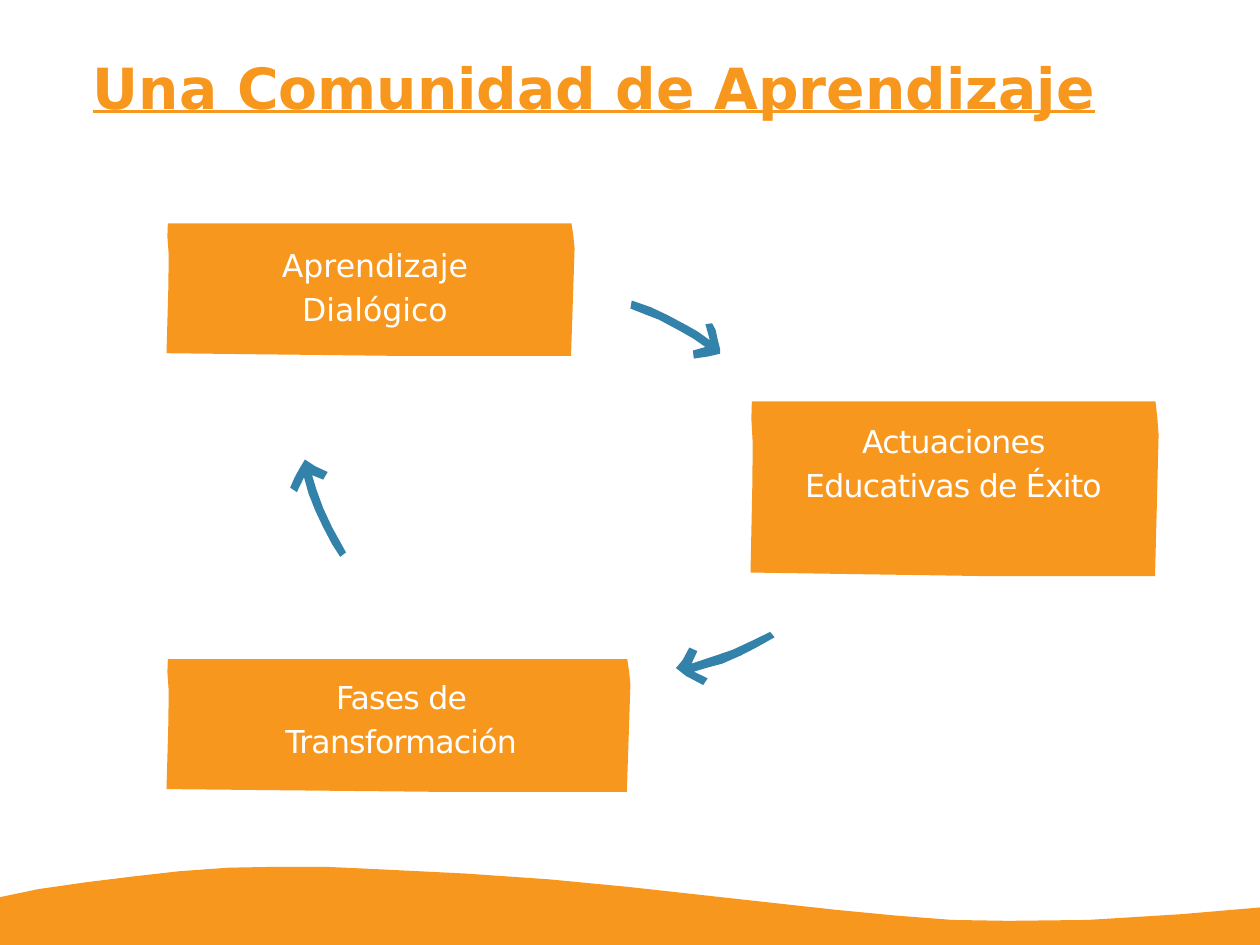
from pptx import Presentation
from pptx.dml.color import RGBColor
from pptx.enum.text import MSO_ANCHOR, MSO_AUTO_SIZE, PP_ALIGN
from pptx.util import Cm, Pt

FONT = "DejaVu Sans"
ORANGE, BLUE, WHITE = "F8971D", "3382AA", "FFFFFF"
WIDTH, HEIGHT = 28.22, 21.16

BOXES = [
    ((3.73, 5.0, 9.14, 2.97), (4.7, 5.36, 7.4, 1.98), "Aprendizaje Dialógico", 0),
    ((16.81, 8.99, 9.14, 3.91), (17.48, 9.3, 7.75, 2.97),
     "Actuaciones Educativas de Éxito", -0.5),
    ((3.73, 14.76, 10.39, 2.97), (5.44, 15.04, 7.09, 1.98),
     "Fases de Transformación", -0.5),
]

WAVE = [
    (0, 20.09), (0.86, 19.91), (1.9, 19.76), (2.95, 19.63), (4.01, 19.51),
    (5.11, 19.43), (6.2, 19.41), (7.29, 19.41), (8.38, 19.46), (10.41, 19.56),
    (12.29, 19.69), (14.07, 19.86), (18.69, 20.37), (20.04, 20.5),
    (21.34, 20.6), (22.58, 20.62), (24.36, 20.6), (26.47, 20.47),
    (WIDTH, 20.32), (WIDTH, HEIGHT), (0, HEIGHT),
]

ARROWS = [
    [(14.15, 6.73), (14.58, 6.88), (14.96, 7.06), (15.39, 7.29), (15.62, 7.42),
     (15.9, 7.62), (15.8, 7.26), (15.95, 7.24), (16.03, 7.39), (16.08, 7.62),
     (16.13, 7.82), (16.13, 7.92), (15.88, 7.98), (15.54, 8.03), (15.52, 7.85),
     (15.8, 7.77), (15.54, 7.59), (15.19, 7.39), (14.76, 7.16), (14.45, 7.04),
     (14.12, 6.91)],
    [(17.25, 14.15), (16.84, 14.35), (16.41, 14.55), (16.03, 14.68),
     (15.49, 14.86), (15.62, 14.58), (15.44, 14.5), (15.29, 14.78),
     (15.14, 14.96), (15.37, 15.14), (15.75, 15.34), (15.85, 15.19),
     (15.54, 15.04), (15.88, 14.94), (16.18, 14.86), (16.59, 14.68),
     (16.94, 14.5), (17.35, 14.27)],
    [(7.62, 12.47), (7.44, 12.19), (7.24, 11.81), (7.06, 11.43), (6.91, 11.05),
     (6.81, 10.69), (6.65, 11.02), (6.5, 10.92), (6.6, 10.69), (6.71, 10.49),
     (6.83, 10.29), (7.06, 10.44), (7.34, 10.57), (7.24, 10.74), (6.99, 10.64),
     (7.09, 10.97), (7.24, 11.38), (7.44, 11.81), (7.75, 12.37)],
]


def rgb(color):
    return RGBColor.from_string(color)


def add_outline(s, points, color):
    start, *rest = [(Cm(x), Cm(y)) for x, y in points]
    builder = s.shapes.build_freeform(*start)
    builder.add_line_segments(rest, close=True)
    sp = builder.convert_to_shape()
    sp.shadow.inherit = False
    sp.fill.solid()
    sp.fill.fore_color.rgb = rgb(color)
    sp.line.fill.background()


def add_ragged_box(s, left, top, width, height):
    right = left + width
    edge = [
        (left + 0.03, 0), (left + 0.02, 0.1), (left + 0.05, 0.24),
        (left + 0.04, 0.5), (left, 0.98), (left + 0.57 * width, 1),
        (right - 0.08, 1), (right - 0.03, 0.5), (right, 0.19),
        (right - 0.03, 0.09), (right - 0.07, 0),
    ]
    add_outline(s, [(x, top + share * height) for x, share in edge], ORANGE)


def set_text(sp, text, size, color, align, spacing):
    tf = sp.text_frame
    tf.word_wrap = True
    tf.auto_size = MSO_AUTO_SIZE.NONE
    tf.vertical_anchor = MSO_ANCHOR.TOP
    tf.margin_left = tf.margin_top = tf.margin_right = tf.margin_bottom = 0
    p = tf.paragraphs[0]
    p.alignment = align
    p.line_spacing = spacing
    r = p.add_run()
    r.text = text
    p.font.name = FONT
    p.font.size = Pt(size)
    p.font.color.rgb = rgb(color)
    return p


def add_title(s, text):
    sp = s.shapes.title
    sp.left, sp.top, sp.width, sp.height = Cm(2.08), Cm(1.09), Cm(25.4), Cm(1.6)
    p = set_text(sp, text, 36, ORANGE, PP_ALIGN.LEFT, Pt(45.5))
    p.font.bold = True
    p.font.underline = True


def add_label(s, place, text, tracking):
    sp = s.shapes.add_textbox(*map(Cm, place))
    p = set_text(sp, text, 20, WHITE, PP_ALIGN.CENTER, 1.17)
    if tracking:
        p.runs[0].font._element.set("spc", str(int(tracking * 100)))


def main():
    prs = Presentation()
    prs.slide_width, prs.slide_height = Cm(WIDTH), Cm(HEIGHT)
    s = prs.slides.add_slide(prs.slide_layouts[5])
    add_title(s, "Una Comunidad de Aprendizaje")
    add_outline(s, WAVE, ORANGE)
    for box, place, text, tracking in BOXES:
        add_ragged_box(s, *box)
        add_label(s, place, text, tracking)
    for arrow in ARROWS:
        add_outline(s, arrow, BLUE)
    prs.save("out.pptx")


if __name__ == "__main__":
    main()
